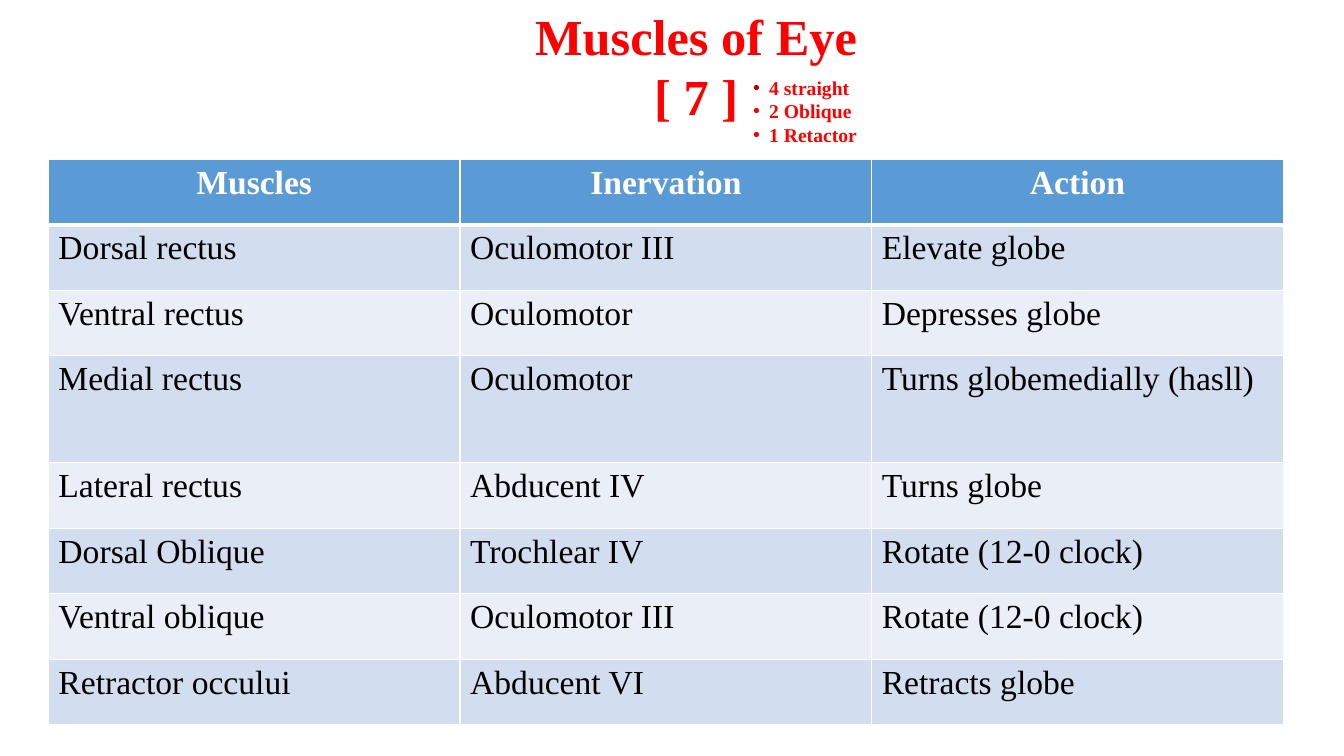
from dataclasses import dataclass

from lxml import etree
from pptx import Presentation
from pptx.dml.color import RGBColor
from pptx.enum import text
from pptx.oxml import ns
from pptx.util import Inches, Pt

FONT = "Times New Roman"
RED = RGBColor(0xFF, 0x00, 0x00)
DARK_RED = RGBColor(0xC0, 0x00, 0x00)
WHITE = RGBColor(0xFF, 0xFF, 0xFF)
BLACK = RGBColor(0x00, 0x00, 0x00)
HEADER_BLUE = RGBColor(0x5B, 0x9B, 0xD5)
BANDS = (RGBColor(0xD2, 0xDE, 0xEF), RGBColor(0xEA, 0xEF, 0xF7))


@dataclass
class Muscle:
    name: str
    innervation: str
    action: str
    height: float = 0.65

    def texts(self) -> tuple[str, str, str]:
        return self.name, self.innervation, self.action


@dataclass
class Count:
    label: str
    bullet_color: RGBColor = RED


HEADER = Muscle("Muscles", "Inervation", "Action")
MUSCLES = [
    Muscle("Dorsal rectus", "Oculomotor III", "Elevate globe"),
    Muscle("Ventral rectus", "Oculomotor", "Depresses globe"),
    Muscle("Medial rectus", "Oculomotor", "Turns globemedially (hasll)", 1.06),
    Muscle("Lateral rectus", "Abducent IV", "Turns globe"),
    Muscle("Dorsal Oblique", "Trochlear IV", "Rotate (12-0 clock)"),
    Muscle("Ventral oblique", "Oculomotor III", "Rotate (12-0 clock)"),
    Muscle("Retractor occului", "Abducent VI", "Retracts globe"),
]
COUNTS = [Count("4 straight", DARK_RED), Count("2 Oblique"), Count("1 Retactor")]


def style(paragraph, size: float, color: RGBColor, bold: bool) -> None:
    font = paragraph.font
    font.name, font.size, font.bold = FONT, Pt(size), bold
    font.color.rgb = color


def add_text(slide, left: float, top: float, width: float, height: float, lines: list[str]):
    box = slide.shapes.add_textbox(Inches(left), Inches(top), Inches(width), Inches(height))
    frame = box.text_frame
    frame.word_wrap = True
    frame.auto_size = text.MSO_AUTO_SIZE.SHAPE_TO_FIT_TEXT
    frame.text = "\n".join(lines)
    return frame.paragraphs


def add_bullet(paragraph, color: RGBColor) -> None:
    props = paragraph._p.get_or_add_pPr()
    props.set("marL", str(Inches(0.16)))
    props.set("indent", str(-Inches(0.16)))
    bullet_color = etree.SubElement(props, ns.qn("a:buClr"))
    etree.SubElement(bullet_color, ns.qn("a:srgbClr"), val=str(color))
    etree.SubElement(props, ns.qn("a:buFont"), typeface="Arial")
    etree.SubElement(props, ns.qn("a:buChar"), char="•")


def set_borders(cell, top: float, bottom: float) -> None:
    props = cell._tc.get_or_add_tcPr()
    for position, (side, width) in enumerate(zip("LRTB", (1, 1, top, bottom))):
        line = etree.Element(ns.qn(f"a:ln{side}"), w=str(Pt(width)))
        fill = etree.SubElement(line, ns.qn("a:solidFill"))
        etree.SubElement(fill, ns.qn("a:srgbClr"), val=str(WHITE))
        props.insert(position, line)


def add_muscle_table(slide) -> None:
    rows = [HEADER, *MUSCLES]
    table = slide.shapes.add_table(
        len(rows), 3, Inches(0.48), Inches(1.58), Inches(12.25),
        Inches(sum(row.height for row in rows))).table
    for r, muscle in enumerate(rows):
        table.rows[r].height = Inches(muscle.height)
        is_header = r == 0
        for c, content in enumerate(muscle.texts()):
            cell = table.cell(r, c)
            cell.text = content
            cell.fill.solid()
            cell.fill.fore_color.rgb = HEADER_BLUE if is_header else BANDS[(r - 1) % 2]
            set_borders(cell, top=3 if r == 1 else 1, bottom=3 if is_header else 1)
            paragraph = cell.text_frame.paragraphs[0]
            if is_header:
                paragraph.alignment = text.PP_ALIGN.CENTER
            style(paragraph, 24, WHITE if is_header else BLACK, is_header)


def main() -> None:
    deck = Presentation()
    deck.slide_width, deck.slide_height = Inches(13.33), Inches(7.5)
    slide = deck.slides.add_slide(deck.slide_layouts[6])

    # Title
    for paragraph in add_text(slide, 2.14, 0, 9.53, 1.31, ["Muscles of Eye", "[ 7 ]"]):
        paragraph.alignment = text.PP_ALIGN.CENTER
        style(paragraph, 36, RED, True)

    # Muscles with their nerves and actions
    add_muscle_table(slide)

    # Muscle counts beside the title
    labels = [count.label for count in COUNTS]
    for paragraph, count in zip(add_text(slide, 7.37, 0.7, 2.58, 1.01, labels), COUNTS):
        add_bullet(paragraph, count.bullet_color)
        style(paragraph, 14, RED, True)

    deck.save("out.pptx")


if __name__ == "__main__":
    main()
